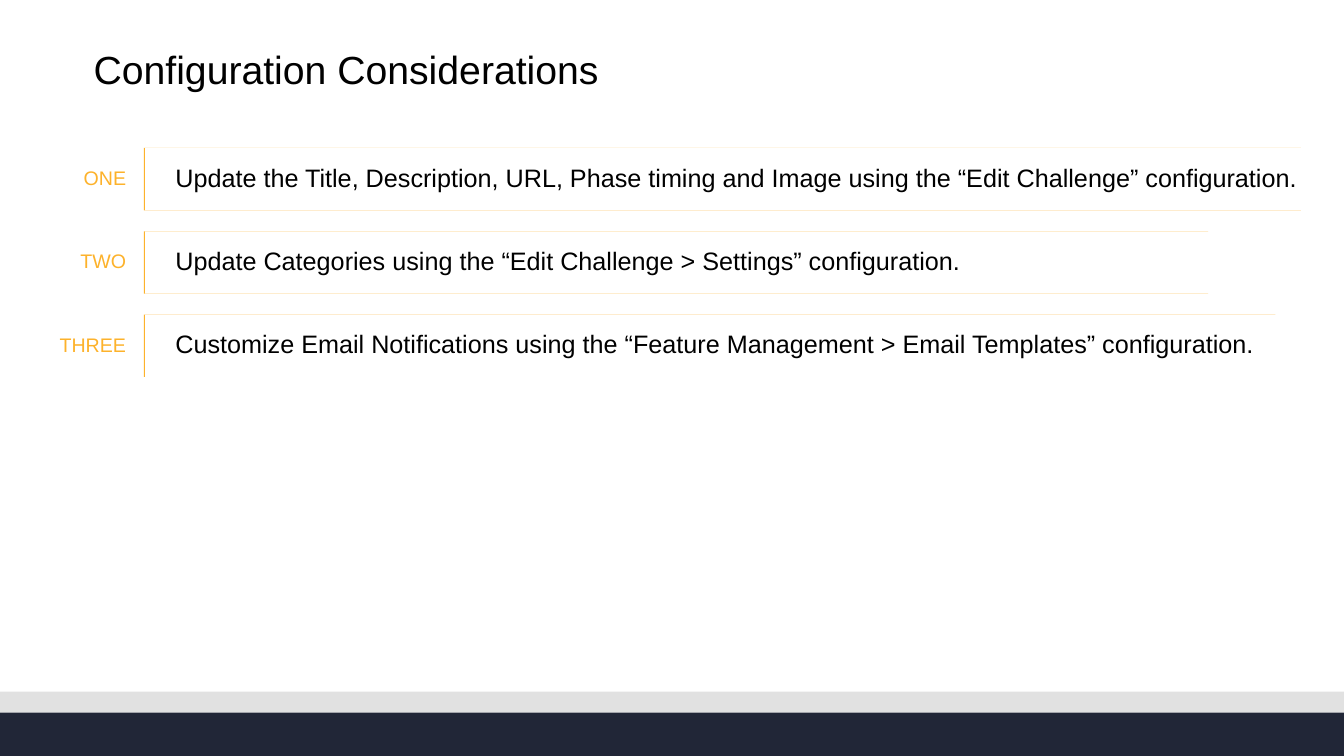
from lxml import etree
from pptx import Presentation
from pptx.dml.color import RGBColor
from pptx.enum.shapes import MSO_SHAPE
from pptx.enum.text import MSO_ANCHOR, PP_ALIGN
from pptx.oxml.ns import qn
from pptx.util import Cm, Pt

RECT = MSO_SHAPE.RECTANGLE
TOP, MIDDLE = MSO_ANCHOR.TOP, MSO_ANCHOR.MIDDLE
LEFT, RIGHT = PP_ALIGN.LEFT, PP_ALIGN.RIGHT

HUES = {"paper": "FFFFFF", "ink": "000000", "gold": "FDB22B",
        "mist": "E1E1E1", "navy": "212637"}
STEPS = [
    ("ONE", 29.16, "Update the Title, Description, URL, Phase timing and Image "
                   "using the “Edit Challenge” configuration."),
    ("TWO", 26.82, "Update Categories using the “Edit Challenge > Settings” configuration."),
    ("THREE", 28.52, "Customize Email Notifications using the "
                     "“Feature Management > Email Templates” configuration."),
]


def style(item, form):
    for key, value in form.items():
        setattr(item, key, value)


def write(shape, text, size, hue, anchor=MIDDLE, align=LEFT, inset=0):
    frame = shape.text_frame
    style(frame, {"word_wrap": True, "vertical_anchor": anchor,
                  "margin_left": Cm(inset), "margin_top": 0,
                  "margin_right": 0, "margin_bottom": 0})
    para = frame.paragraphs[0]
    style(para, {"text": text, "alignment": align, "line_spacing": 0.9})
    style(para.runs[0].font, {"name": "Arial", "size": Pt(size)})
    para.runs[0].font.color.rgb = RGBColor.from_string(HUES[hue])


def panel(slide, box, hue):
    shape = slide.shapes.add_shape(RECT, *map(Cm, box))
    shape.shadow.inherit = False
    shape.fill.solid()
    shape.fill.fore_color.rgb = RGBColor.from_string(HUES[hue])
    shape.line.fill.background()
    return shape


def edge(shape, hue):
    effects = shape._element.spPr.find(qn("a:effectLst"))
    shade = etree.SubElement(effects, qn("a:outerShdw"), blurRad="0", dist="12700",
                             dir="10800000", algn="r", rotWithShape="0")
    etree.SubElement(shade, qn("a:srgbClr"), val=HUES[hue])


def title(slide, box):
    label = slide.shapes.add_textbox(*map(Cm, box))
    write(label, "Configuration Considerations", 28, "ink", anchor=TOP)


def step(slide, box, name, text):
    left, top, width, height = box
    card = panel(slide, box, "paper")
    edge(card, "gold")
    write(card, text, 18, "ink", inset=0.76)
    label = slide.shapes.add_textbox(Cm(0), Cm(top), Cm(left - 0.48), Cm(height))
    write(label, name, 14, "gold", align=RIGHT)


def steps(slide, left, top, height, gap):
    for row, (name, width, text) in enumerate(STEPS):
        step(slide, (left, top + row * (height + gap), width, height), name, text)


def footer(slide, box):
    left, top, width, height = box
    strip = 0.53
    panel(slide, (left, top, width, strip), "mist")
    panel(slide, (left, top + strip, width, height - strip), "navy")


def main():
    deck = Presentation()
    style(deck, {"slide_width": Cm(33.87), "slide_height": Cm(19.05)})
    slide = deck.slides.add_slide(deck.slide_layouts[6])
    footer(slide, (0, 17.43, 33.87, 1.62))
    steps(slide, 3.66, 3.73, 1.57, 0.53)
    title(slide, (2.36, 1.27, 27.41, 2.2))
    deck.save("out.pptx")


if __name__ == "__main__":
    main()
